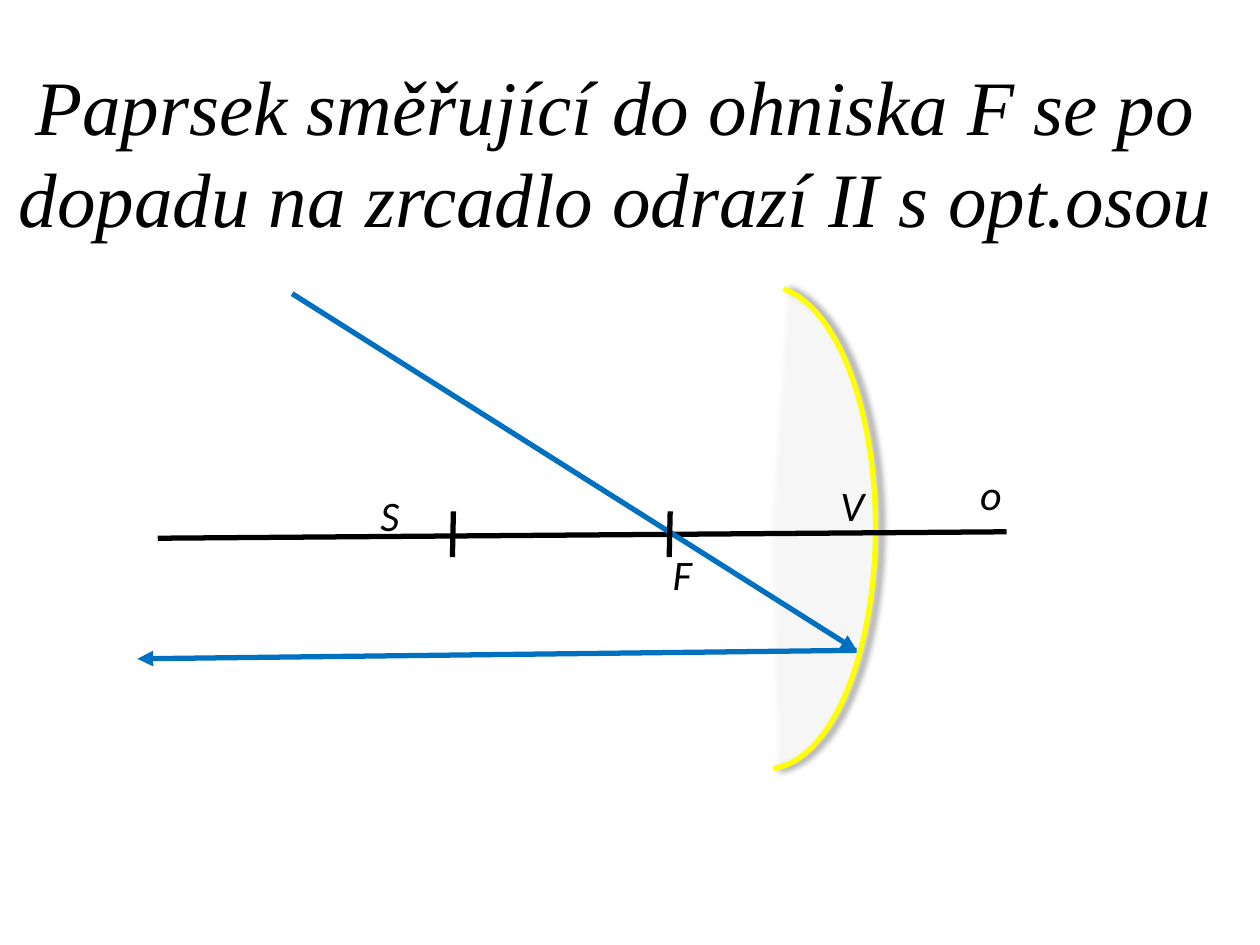
from dataclasses import dataclass

from lxml.etree import SubElement
from pptx import Presentation
from pptx.dml.color import RGBColor
from pptx.enum.shapes import MSO_CONNECTOR, MSO_SHAPE
from pptx.enum.text import MSO_ANCHOR, MSO_AUTO_SIZE, PP_ALIGN
from pptx.oxml.ns import qn
from pptx.slide import Slide
from pptx.text.text import TextFrame
from pptx.util import Cm, Pt


@dataclass(frozen=True)
class Theme:
    ink: str = "000000"
    ray: str = "0070C0"
    mirror: str = "FFFF00"
    glass: str = "FFFFFF"
    head: str = "Times New Roman"
    body: str = "Calibri"
    big: int = 44
    small: int = 24
    stroke: int = 3


THEME = Theme()


@dataclass(frozen=True)
class Line:
    start: tuple[float, float]
    end: tuple[float, float]
    color: str = THEME.ink
    arrow: bool = False


@dataclass(frozen=True)
class Label:
    text: str
    left: float
    top: float
    width: float = 0.99
    height: float = 1.27


def tick(x: float) -> Line:
    return Line((x, 10.31), (x - 0.02, 11.23))


HIT = (17.27, 13.11)
LINES = [
    Line((3.18, 10.85), (20.29, 10.72)),
    Line(HIT, (2.77, 13.28), THEME.ray, arrow=True),
    Line((5.89, 5.92), HIT, THEME.ray, arrow=True),
    tick(13.51),
    tick(9.14),
]
LABELS = [
    Label("o", 19.51, 9.32),
    Label("F", 13.31, 10.92),
    Label("S", 7.42, 9.73),
    Label("V", 16.69, 9.53),
]


def write(frame: TextFrame, text: str, *, font: str, size: int,
          align: PP_ALIGN = PP_ALIGN.LEFT,
          anchor: MSO_ANCHOR = MSO_ANCHOR.TOP,
          inset: tuple[float, float] = (0.25, 0.13)) -> None:
    frame.word_wrap = True
    frame.auto_size = MSO_AUTO_SIZE.NONE
    frame.vertical_anchor = anchor
    frame.margin_left = frame.margin_right = Cm(inset[0])
    frame.margin_top = frame.margin_bottom = Cm(inset[1])
    par = frame.paragraphs[0]
    par.alignment = align
    run = par.add_run()
    run.text = text
    run.font.name = font
    run.font.size = Pt(size)
    run.font.italic = True
    run.font.color.rgb = RGBColor.from_string(THEME.ink)


def add_title(slide: Slide, text: str) -> None:
    title = slide.shapes.title
    title.left, title.top = Cm(0), Cm(0.99)
    title.width, title.height = Cm(24.82), Cm(4.09)
    write(title.text_frame, text, font=THEME.head, size=THEME.big,
          align=PP_ALIGN.CENTER, anchor=MSO_ANCHOR.MIDDLE, inset=(0, 0))


def add_mirror(slide: Slide) -> None:
    """Draw the arc with a faint fill and a soft shadow to its right."""
    arc = slide.shapes.add_shape(
        MSO_SHAPE.ARC, Cm(13.28), Cm(5.77), Cm(4.37), Cm(9.73))
    for i, angle in enumerate((273.9, 88.5)):
        arc.adjustments[i] = angle * 0.6  # 60000 units a degree, scaled by 100000
    arc.line.color.rgb = RGBColor.from_string(THEME.mirror)
    arc.line.width = Pt(THEME.stroke)
    arc.fill.solid()
    arc.fill.fore_color.rgb = RGBColor.from_string(THEME.glass)
    props = arc.fill._xPr
    tint = props.find(qn("a:solidFill")).find(qn("a:srgbClr"))
    SubElement(tint, qn("a:alpha"), val="10000")
    arc.shadow.inherit = False
    shade = SubElement(props.find(qn("a:effectLst")), qn("a:outerShdw"),
                       blurRad=str(Pt(4)), dist=str(Pt(3)), dir="0",
                       algn="l", rotWithShape="0")
    black = SubElement(shade, qn("a:srgbClr"), val=THEME.ink)
    SubElement(black, qn("a:alpha"), val="40000")


def add_line(slide: Slide, item: Line) -> None:
    points = [Cm(v) for v in (*item.start, *item.end)]
    line = slide.shapes.add_connector(MSO_CONNECTOR.STRAIGHT, *points)
    line.line.color.rgb = RGBColor.from_string(item.color)
    line.line.width = Pt(THEME.stroke)
    if item.arrow:
        SubElement(line.line._get_or_add_ln(), qn("a:tailEnd"), type="triangle")
    SubElement(line._element.spPr, qn("a:effectLst"))


def add_label(slide: Slide, item: Label) -> None:
    box = slide.shapes.add_textbox(
        Cm(item.left), Cm(item.top), Cm(item.width), Cm(item.height))
    write(box.text_frame, item.text, font=THEME.body, size=THEME.small)


def main() -> None:
    deck = Presentation()
    deck.slide_width, deck.slide_height = Cm(25.4), Cm(19.05)
    slide = deck.slides.add_slide(deck.slide_layouts[5])
    add_title(slide, "Paprsek směřující do ohniska F se po dopadu "
                     "na zrcadlo odrazí II s opt.osou")
    add_mirror(slide)
    for line in LINES:
        add_line(slide, line)
    for label in LABELS:
        add_label(slide, label)
    deck.save("out.pptx")


if __name__ == "__main__":
    main()
